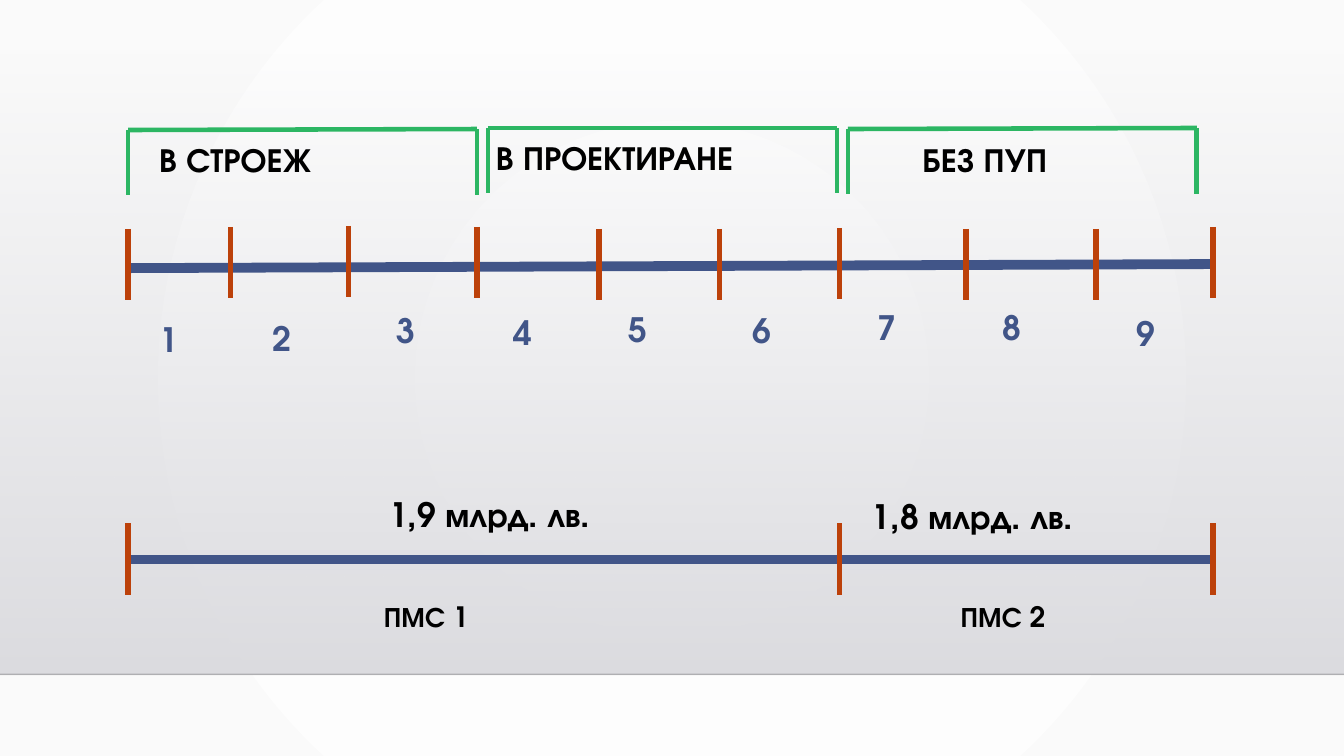
from pptx import Presentation
from pptx.dml.color import RGBColor
from pptx.enum.shapes import MSO_CONNECTOR as CONN, MSO_SHAPE as SHAPE
from pptx.oxml import parse_xml
from pptx.oxml.ns import nsdecls, qn
from pptx.util import Inches, Pt


def rgb(value):
    """Turn a hex string into a colour."""
    return RGBColor.from_string(value)


class TimelineSlide:
    """Hold the slide and its style, and draw each kind of element."""

    FONT = "TeX Gyre Adventor"
    BLUE, RUST, GREEN, BLACK = "415588", "BC410A", "2CB663", "000000"

    def __init__(self, prs):
        """Add a blank slide."""
        self.s = prs.slides.add_slide(prs.slide_layouts[6])

    def gradient(self, fill, colors):
        """Give a fill a gradient between two colours."""
        fill.gradient()
        for stop, color in zip(fill.gradient_stops, colors):
            stop.color.rgb = rgb(color)

    def alpha(self, color, percent):
        """Set the opacity of a colour element."""
        color.append(parse_xml(f'<a:alpha {nsdecls("a")} val="{percent * 1000}"/>'))

    def background(self, inner, outer):
        """Fill the background with a circular gradient."""
        self.gradient(self.s.background.fill, (inner, outer))
        grad = self.s.element.xpath(".//p:bg//a:gradFill")[0]
        for lin in grad.findall(qn("a:lin")):
            grad.remove(lin)
        grad.append(parse_xml(
            f'<a:path {nsdecls("a")} path="circle"><a:fillToRect l="50000" '
            't="50000" r="50000" b="50000"/></a:path>'))

    def panel(self, x, y, w, h, colors):
        """Draw a panel that fades in from top to bottom."""
        sp = self.s.shapes.add_shape(
            SHAPE.RECTANGLE, Inches(x), Inches(y), Inches(w), Inches(h))
        sp.shadow.inherit = False
        sp.line.fill.background()
        self.gradient(sp.fill, colors)
        sp.fill.gradient_angle = 270
        self.alpha(sp.element.xpath(".//a:gs/a:srgbClr")[0], 0)

    def line(self, x1, y1, x2, y2, color, width, opacity=100):
        """Draw a straight line."""
        cx = self.s.shapes.add_connector(
            CONN.STRAIGHT, Inches(x1), Inches(y1), Inches(x2), Inches(y2))
        cx.line.color.rgb = rgb(color)
        cx.line.width = Pt(width)
        if opacity < 100:
            self.alpha(cx._element.xpath(".//a:ln//a:srgbClr")[0], opacity)
        cx._element.spPr.append(parse_xml(f'<a:effectLst {nsdecls("a")}/>'))

    def tick(self, x, y):
        """Draw a tick across a time line."""
        self.line(x, y, x, y + 0.71, self.RUST, 3.75)

    def bracket(self, x, y_left, y_right, bottom):
        """Draw a bracket that opens downwards."""
        right = x + 3.46
        self.line(x, bottom, x, y_left, self.GREEN, 3)
        self.line(x, y_left, right, y_right, self.GREEN, 3.25)
        self.line(right, y_right, right, bottom, self.GREEN, 3.25)

    def text(self, text, x, y, w, color=BLACK, size=24):
        """Write a bold label."""
        tf = self.s.shapes.add_textbox(
            Inches(x), Inches(y), Inches(w), Inches(0.65)).text_frame
        tf.word_wrap = True
        r = tf.paragraphs[0].add_run()
        r.text = text
        style = {"name": self.FONT, "size": Pt(size), "bold": True}
        for key, value in style.items():
            setattr(r.font, key, value)
        r.font.color.rgb = rgb(color)


def main():
    """Build the slide and save it."""
    prs = Presentation()
    prs.slide_width, prs.slide_height = Inches(13.33), Inches(7.5)
    slide = TimelineSlide(prs)
    start, split, end = 1.27, 8.33, 12.03

    slide.background("FFFFFF", "FAFAFA")
    slide.panel(0, 0.51, 13.33, 6.18, ("DCDCE0", "DEDEE2"))
    slide.line(0, 6.69, 13.33, 6.69, "000001", 1, 20)

    slide.line(start, 2.66, end, 2.62, slide.BLUE, 7)
    slide.line(start, 5.55, end, 5.55, slide.BLUE, 7)
    for x, y in [(start, 2.27), (2.29, 2.25), (3.46, 2.24), (4.73, 2.25),
                 (5.94, 2.27), (7.14, 2.27), (split, 2.26), (9.58, 2.27),
                 (10.87, 2.27), (end, 2.25)]:
        slide.tick(x, y)
    for x in (start, split, end):
        slide.tick(x, 5.19)

    numbers = [(1.48, 3.11), (2.6, 3.1), (3.83, 3.03), (4.99, 3.04), (6.14, 3.02),
               (7.37, 3.03), (8.61, 3), (9.84, 3), (11.17, 3.05)]
    for number, (x, y) in enumerate(numbers, 1):
        slide.text(str(number), x, y, 0.5, slide.BLUE)

    stages = [("В СТРОЕЖ", 1.48, 1.33, 2.52, 1.29, 1.28, 1.93),
              ("В ПРОЕКТИРАНЕ", 4.82, 1.31, 3.72, 1.27, 1.27, 1.91),
              ("БЕЗ ПУП", 9.05, 1.33, 2.08, 1.28, 1.27, 1.92)]
    for i, (name, x, y, w, y_left, y_right, bottom) in enumerate(stages):
        slide.bracket(start + 3.57 * i, y_left, y_right, bottom)
        slide.text(name, x, y, w)

    slide.text("1,9 млрд. лв.", 3.76, 4.85, 3.08)
    slide.text("1,8 млрд. лв.", 8.55, 4.87, 3.1)
    slide.text("ПМС 1", 3.71, 5.9, 1.42, size=20)
    slide.text("ПМС 2", 9.43, 5.9, 1.42, size=20)
    prs.save("out.pptx")


if __name__ == "__main__":
    main()
